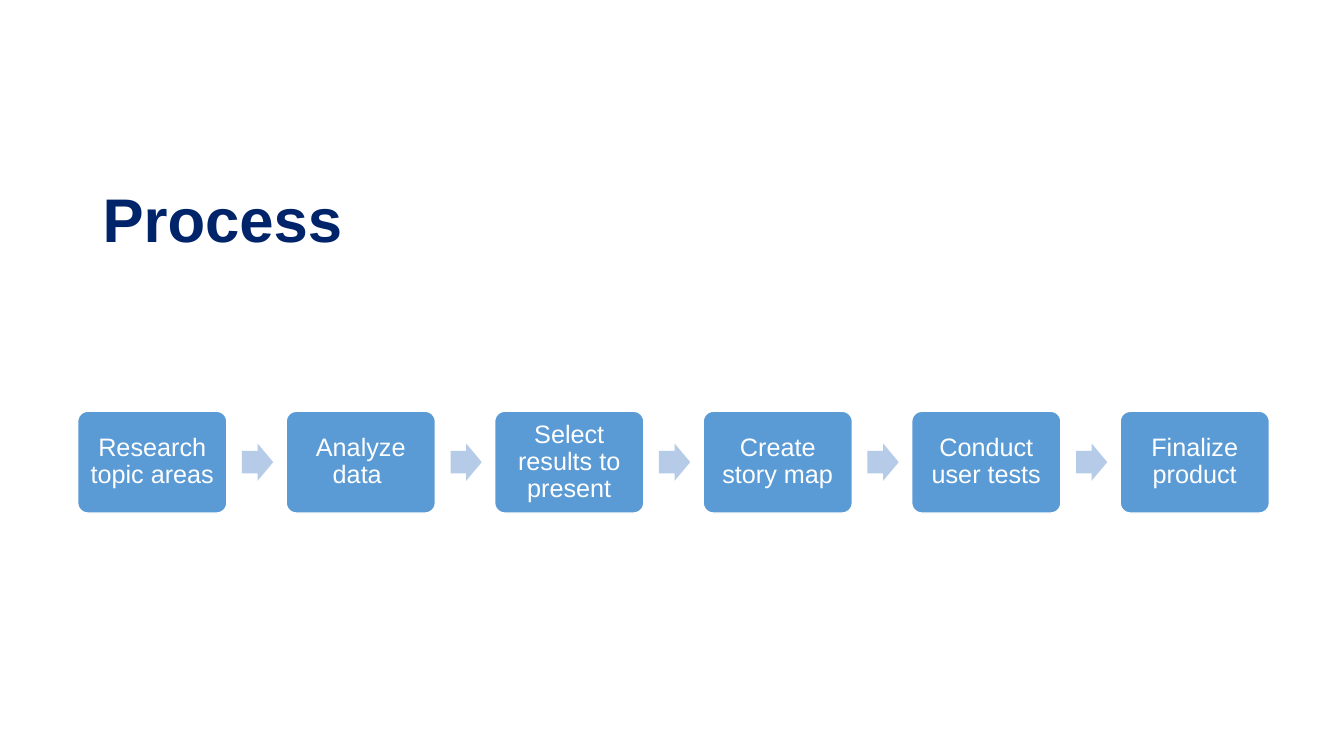
from pptx import Presentation
from pptx.dml.color import RGBColor
from pptx.enum.shapes import MSO_SHAPE
from pptx.enum.text import MSO_ANCHOR, PP_ALIGN
from pptx.util import Inches, Pt

ROUNDED = MSO_SHAPE.ROUNDED_RECTANGLE
RIGHT_ARROW = MSO_SHAPE.RIGHT_ARROW
MIDDLE = MSO_ANCHOR.MIDDLE
LEFT, CENTER = PP_ALIGN.LEFT, PP_ALIGN.CENTER

COLORS = {"title": "002469", "step": "5B9BD5", "arrow": "B5CBE7", "white": "FFFFFF"}
FONT = "Arial"

STEPS = ["Research topic areas", "Analyze data ", "Select results to present",
         "Create story map", "Conduct user tests", "Finalize product"]
FIRST_LEFT, LAST_LEFT = 0.77, 11.11
PITCH = (LAST_LEFT - FIRST_LEFT) / (len(STEPS) - 1)
STEP_TOP, STEP_WIDTH, STEP_HEIGHT = 4.08, 1.48, 1.01
ARROW_OFFSET, ARROW_TOP, ARROW_WIDTH, ARROW_HEIGHT = 1.63, 4.4, 0.31, 0.37


def rgb(name):
    return RGBColor.from_string(COLORS[name])


def write(frame, text, *, size, color, bold=False, align=LEFT, inset=None):
    frame.word_wrap = True
    frame.vertical_anchor = MIDDLE
    if inset is not None:
        frame.margin_left = frame.margin_right = Inches(inset)
        frame.margin_top = frame.margin_bottom = Inches(inset)
    paragraph = frame.paragraphs[0]
    paragraph.alignment = align
    paragraph.line_spacing = 0.9
    run = paragraph.add_run()
    run.text = text
    run.font.name = FONT
    run.font.size = Pt(size)
    run.font.bold = bold
    run.font.color.rgb = rgb(color)


class ProcessSlide:
    def __init__(self, presentation):
        self.slide = presentation.slides.add_slide(presentation.slide_layouts[6])

    def title(self, text, left, top, width, height):
        heading = self.slide.shapes.add_textbox(
            Inches(left), Inches(top), Inches(width), Inches(height))
        write(heading.text_frame, text, size=44, color="title", bold=True)

    def block(self, kind, left, top, width, height, fill, adjustments):
        block = self.slide.shapes.add_shape(
            kind, Inches(left), Inches(top), Inches(width), Inches(height))
        block.shadow.inherit = False
        block.fill.solid()
        block.fill.fore_color.rgb = rgb(fill)
        block.line.fill.background()
        for index, value in enumerate(adjustments):
            block.adjustments[index] = value
        return block

    def step(self, text, left):
        step = self.block(ROUNDED, left, STEP_TOP, STEP_WIDTH, STEP_HEIGHT, "step", [0.1])
        step.line.color.rgb = rgb("white")
        step.line.width = Pt(1)
        write(step.text_frame, text, size=18, color="white", align=CENTER, inset=0.07)

    def arrow(self, left):
        self.block(RIGHT_ARROW, left, ARROW_TOP, ARROW_WIDTH, ARROW_HEIGHT,
                   "arrow", [0.6, 0.5])


def main():
    presentation = Presentation()
    presentation.slide_width = Inches(13.33)
    presentation.slide_height = Inches(7.5)
    process = ProcessSlide(presentation)

    # Heading
    process.title("Process", 0.92, 1.48, 11.5, 1.45)

    # Steps, with an arrow between neighbours
    for index, text in enumerate(STEPS):
        left = FIRST_LEFT + index * PITCH
        process.step(text, left)
        if index < len(STEPS) - 1:
            process.arrow(left + ARROW_OFFSET)

    presentation.save("out.pptx")


if __name__ == "__main__":
    main()
